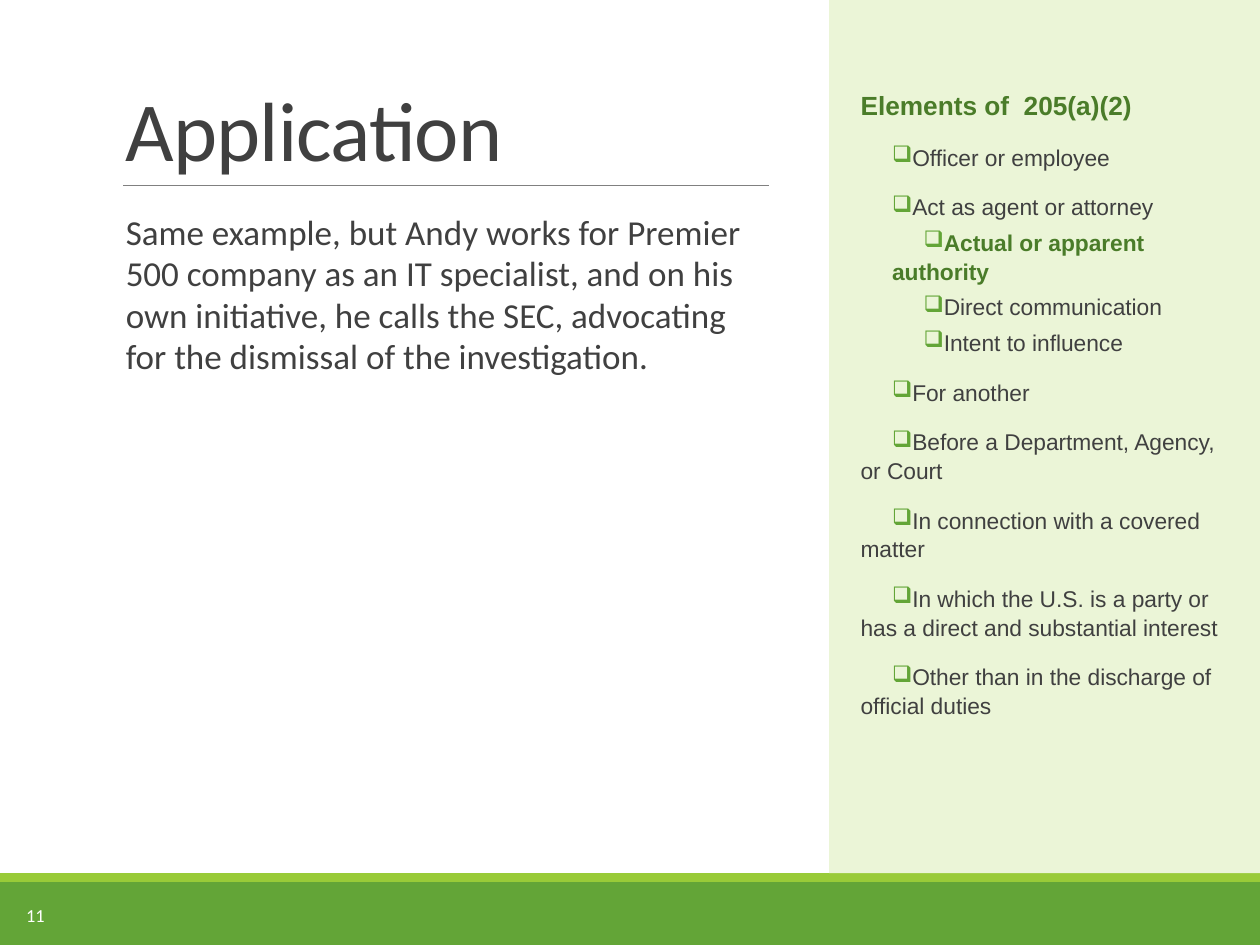
import pptx
import pptx.dml.color
import pptx.enum.shapes
import pptx.enum.text
import pptx.oxml.ns
import pptx.util
from lxml import etree

Inches = pptx.util.Inches
Pt = pptx.util.Pt
RGBColor = pptx.dml.color.RGBColor
Anchor = pptx.enum.text.MSO_ANCHOR
qn = pptx.oxml.ns.qn

WHITE = RGBColor(0xFF, 0xFF, 0xFF)
INK = RGBColor(0x40, 0x40, 0x40)
RULE = RGBColor(0x80, 0x80, 0x80)
GREEN = RGBColor(0x63, 0xA5, 0x37)
LIME = RGBColor(0x99, 0xCB, 0x38)
PALE = RGBColor(0xEB, 0xF5, 0xD7)
DARK_GREEN = RGBColor(0x4A, 0x7C, 0x29)

BODY = (
    "Same example, but Andy works for Premier 500 company as an IT specialist, "
    "and on his own initiative, he calls the SEC, advocating for the dismissal "
    "of the investigation."
)
HEADING = "Elements of  205(a)(2)"
# Each element: text, depth, space after, emphasised
ELEMENTS = [
    ("Officer or employee", 0, 12, False),
    ("Act as agent or attorney", 0, 4, False),
    ("Actual or apparent authority", 1, 4, True),
    ("Direct communication", 1, 4, False),
    ("Intent to influence", 1, 12, False),
    ("For another", 0, 12, False),
    ("Before a Department, Agency, or Court", 0, 12, False),
    ("In connection with a covered matter", 0, 12, False),
    ("In which the U.S. is a party or has a direct and substantial interest", 0, 12, False),
    ("Other than in the discharge of official duties", 0, 12, False),
]


def style(para, name, size, color, bold=False):
    """Set the font of a whole paragraph."""
    font = para.font
    font.name, font.size, font.bold = name, Pt(size), bold
    font.color.rgb = color


def add_block(page, left, top, width, height, color):
    """Add a plain filled rectangle."""
    block = page.shapes.add_shape(
        pptx.enum.shapes.MSO_SHAPE.RECTANGLE,
        Inches(left), Inches(top), Inches(width), Inches(height),
    )
    block.shadow.inherit = False
    block.fill.solid()
    block.fill.fore_color.rgb = color
    block.line.fill.background()
    return block


def add_text(page, left, top, width, height, text, size, color, anchor):
    """Add a wrapped one-paragraph text box and return its paragraph."""
    box = page.shapes.add_textbox(Inches(left), Inches(top), Inches(width), Inches(height))
    frame = box.text_frame
    frame.word_wrap = True
    frame.vertical_anchor = anchor
    para = frame.paragraphs[0]
    para.text = text
    style(para, "Calibri", size, color)
    return para


def add_checkbox(para, depth):
    """Give a paragraph a box bullet and a first-line indent."""
    props = para._p.get_or_add_pPr()
    props.set("marL", str(Inches(0.25 * depth)))
    props.set("indent", str(Inches(0.25)))
    bullet_color = etree.SubElement(props, qn("a:buClr"))
    etree.SubElement(bullet_color, qn("a:srgbClr"), val=str(GREEN))
    etree.SubElement(props, qn("a:buChar"), char="❑")


def add_main(page, left, top, width):
    """Add the title, the rule under it and the body text."""
    title = add_text(page, left, top, width, 1.16, "Application", 48, INK, Anchor.BOTTOM)
    title.line_spacing = 0.85
    title.runs[0].font._element.set("spc", "-50")
    rule_top = Inches(top + 1.16)
    rule = page.shapes.add_connector(
        pptx.enum.shapes.MSO_CONNECTOR.STRAIGHT,
        Inches(left + 0.08), rule_top, Inches(left + width), rule_top,
    )
    rule.line.color.rgb = RULE
    rule.line.width = Pt(0.5)
    etree.SubElement(rule._element.spPr, qn("a:effectLst"))
    body = add_text(page, left, top + 1.33, width, 4.78, BODY, 20, INK, Anchor.TOP)
    body.line_spacing = 0.98


def add_panel(page, left, top, width, height):
    """Add the side panel with the heading and the checklist."""
    frame = add_block(page, left, top, width, height, PALE).text_frame
    frame.word_wrap = True
    frame.vertical_anchor = Anchor.TOP
    frame.margin_left, frame.margin_right = Inches(0.25), Inches(0.3)
    frame.margin_top = Inches(0.7)
    heading = frame.paragraphs[0]
    heading.text = HEADING
    heading.space_after = Pt(12)
    style(heading, "Arial", 15, DARK_GREEN, True)
    for text, depth, after, strong in ELEMENTS:
        para = frame.add_paragraph()
        para.text = text
        add_checkbox(para, depth)
        para.space_after = Pt(after)
        style(para, "Arial", 13, DARK_GREEN if strong else INK, strong)
    for para in frame.paragraphs:
        para.alignment = pptx.enum.text.PP_ALIGN.LEFT
        para.line_spacing = 1.05


def add_footer(page, left, top, width):
    """Add the two green bands and the page number."""
    add_block(page, left, top + 0.07, width, 0.5, GREEN)
    add_block(page, left, top, width, 0.07, LIME)
    add_text(page, left + 0.11, top + 0.13, 0.54, 0.4, "11", 10.5, WHITE, Anchor.MIDDLE)


def main():
    """Build the deck and save it."""
    deck = pptx.Presentation()
    deck.slide_width, deck.slide_height = Inches(10), Inches(7.5)
    page = deck.slides.add_slide(deck.slide_layouts[6])
    add_footer(page, 0, 6.93, 10)
    add_main(page, 0.9, 0.31, 5.2)
    add_panel(page, 6.58, 0, 3.42, 6.93)
    deck.save("out.pptx")


if __name__ == "__main__":
    main()
